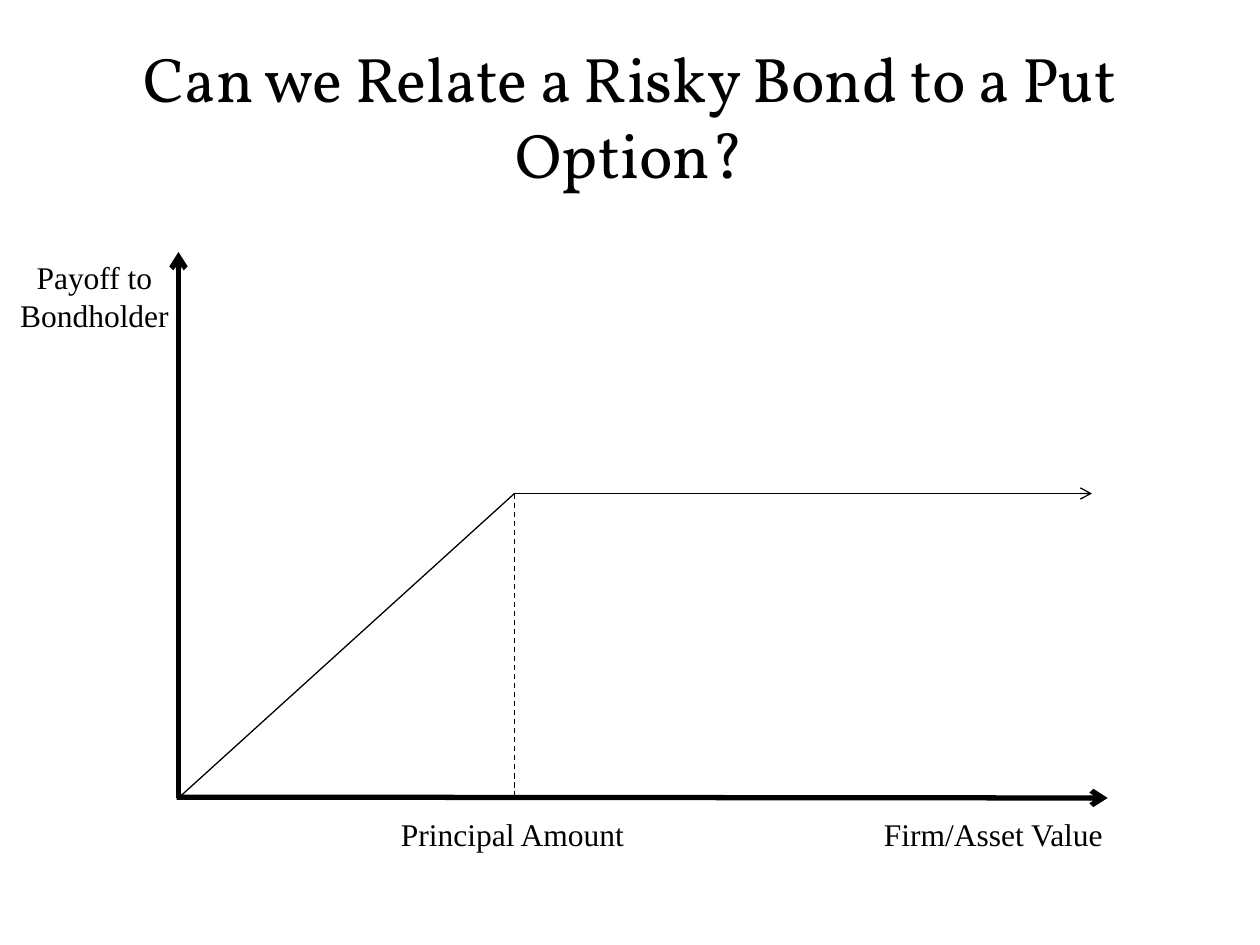
from pptx import Presentation
from pptx.dml.color import RGBColor
from pptx.enum.dml import MSO_LINE
from pptx.enum.shapes import MSO_CONNECTOR
from pptx.enum.text import MSO_ANCHOR, MSO_AUTO_SIZE, PP_ALIGN
from pptx.oxml.ns import qn
from pptx.util import Pt
from lxml.etree import SubElement

BLACK = RGBColor(0, 0, 0)
TITLE_FONT = "Vollkorn"
LABEL_FONT = "Times New Roman"


def write_text(frame, text, font=LABEL_FONT, size=18, align=PP_ALIGN.LEFT,
               anchor=MSO_ANCHOR.TOP, fit=MSO_AUTO_SIZE.SHAPE_TO_FIT_TEXT):
    frame.word_wrap = True
    frame.auto_size = fit
    frame.vertical_anchor = anchor
    para = frame.paragraphs[0]
    para.alignment = align
    span = para.add_run()
    span.text = text
    span.font.name = font
    span.font.size = Pt(size)
    span.font.color.rgb = BLACK


def add_line(page, start, end, width=0.75, arrow=False, dashed=False):
    line = page.shapes.add_connector(
        MSO_CONNECTOR.STRAIGHT, *(Pt(value) for value in (*start, *end)))
    line.line.color.rgb = BLACK
    line.line.width = Pt(width)
    if dashed:
        line.line.dash_style = MSO_LINE.DASH
    if arrow:
        SubElement(line.line._get_or_add_ln(), qn("a:tailEnd"), type="arrow")
    SubElement(line._element.spPr, qn("a:effectLst"))


def add_label(page, text, left, top, width, height, **style):
    box = page.shapes.add_textbox(Pt(left), Pt(top), Pt(width), Pt(height))
    write_text(box.text_frame, text, **style)


def place_title(page, text, left, top, width, height):
    title = page.shapes.title
    title.left, title.top = Pt(left), Pt(top)
    title.width, title.height = Pt(width), Pt(height)
    write_text(title.text_frame, text, font=TITLE_FONT, size=36,
               align=PP_ALIGN.CENTER, anchor=MSO_ANCHOR.MIDDLE,
               fit=MSO_AUTO_SIZE.NONE)


def draw_payoff(page, left, top, width, height):
    base = top + height
    origin = (left, base)
    kink = (left + 192, top + 138)
    add_line(page, origin, (left, top), width=3, arrow=True)
    add_line(page, (left - 1, base - 0.5), (left + width, base), width=3, arrow=True)
    add_line(page, origin, kink)
    add_line(page, kink, (left + width - 9, kink[1]), arrow=True)
    add_line(page, kink, (kink[0], base), dashed=True)

    label_top = base + 6
    add_label(page, "Principal Amount", kink[0] - 72, label_top, 204, 29)
    add_label(page, "Firm/Asset Value", left + width - 135, label_top, 204, 29)
    add_label(page, "Payoff to Bondholder", left - 102, top, 108, 51,
              align=PP_ALIGN.CENTER)


def main():
    deck = Presentation()
    deck.slide_width, deck.slide_height = Pt(720), Pt(540)
    page = deck.slides.add_slide(deck.slide_layouts[5])
    place_title(page, "Can we Relate a Risky Bond to a Put Option?", 54, 30, 612, 72)
    draw_payoff(page, 102, 144, 531, 312)
    deck.save("out.pptx")


if __name__ == "__main__":
    main()
